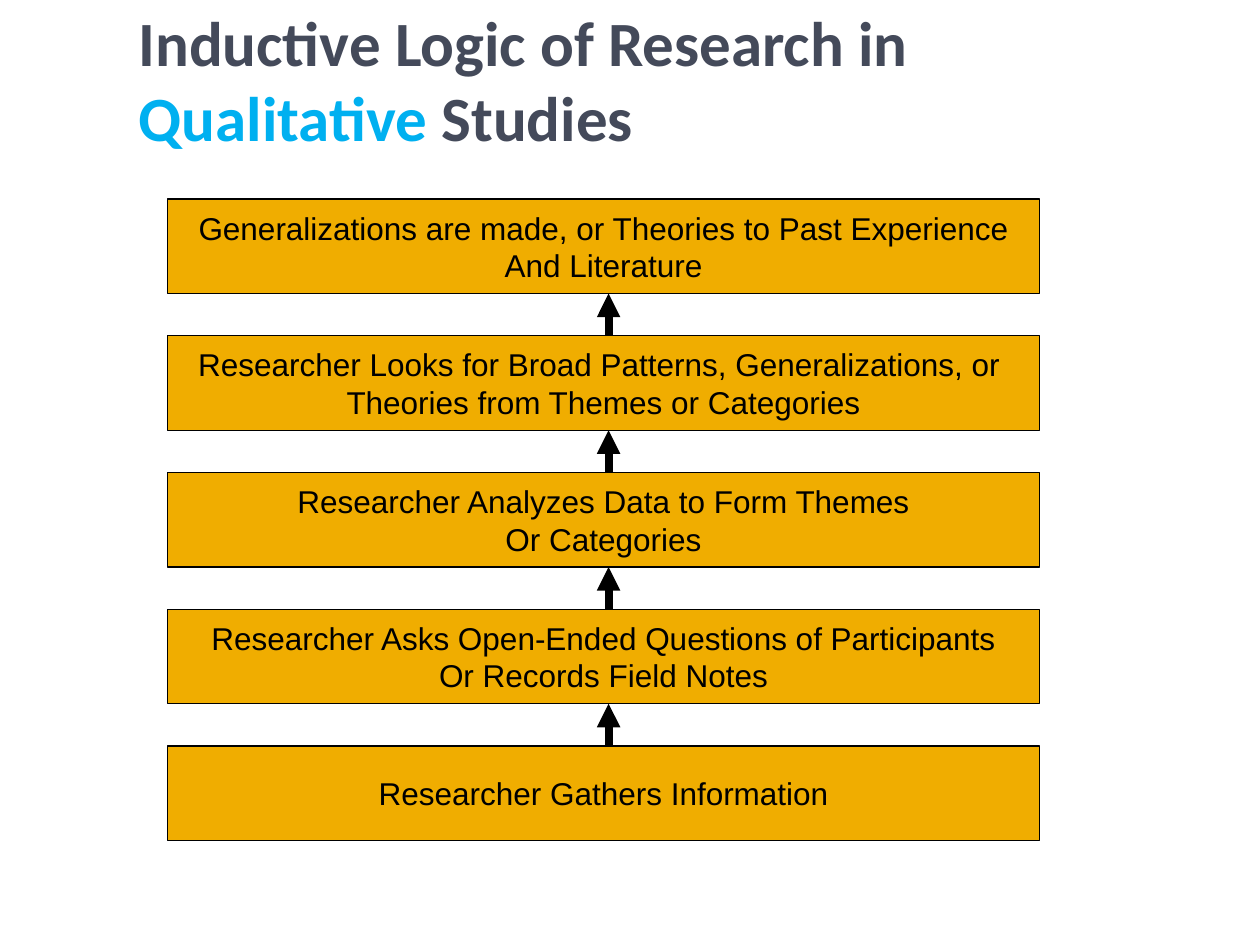
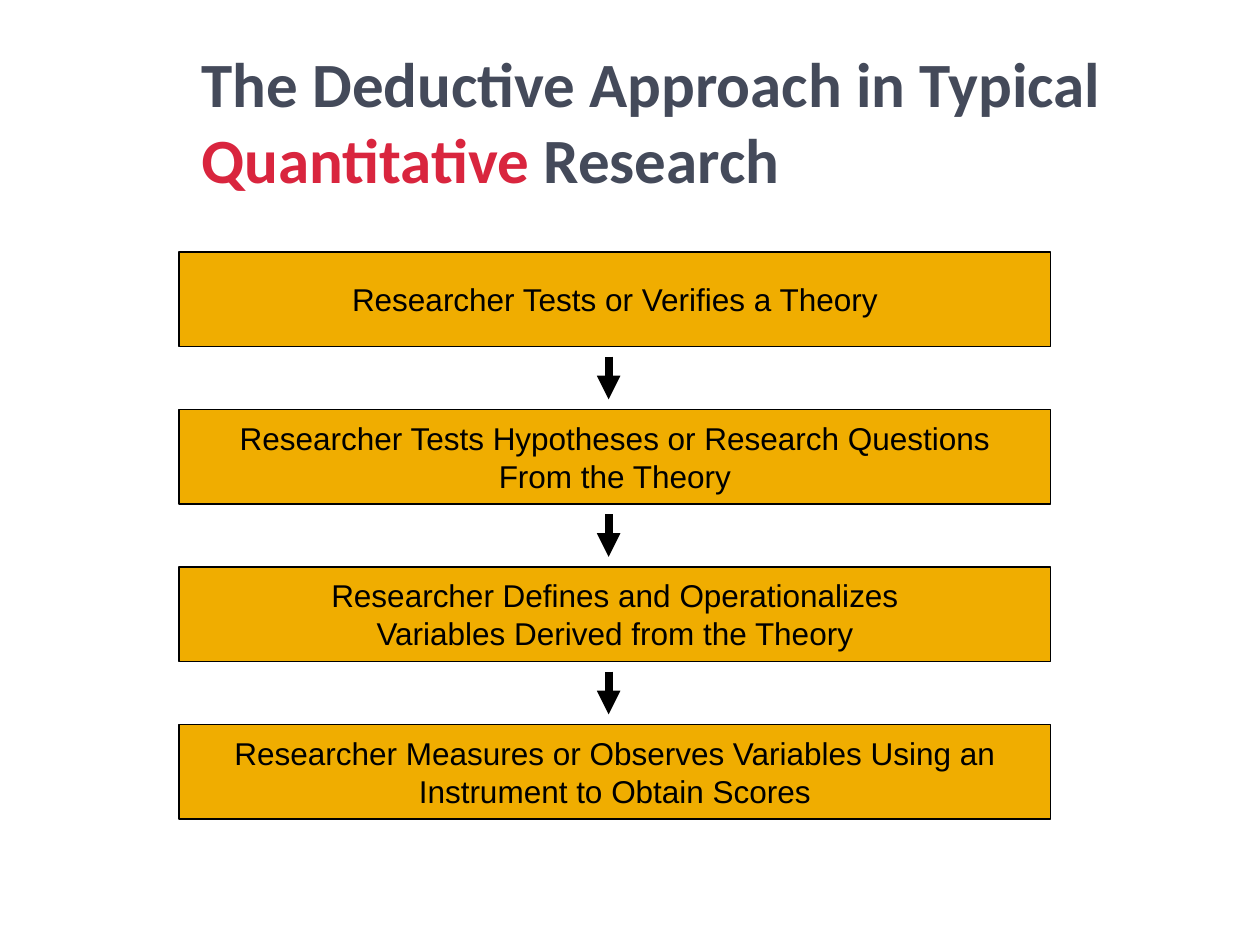
from pptx import Presentation
from pptx.dml.color import RGBColor
from pptx.enum import shapes, text
from pptx.oxml.ns import qn
from pptx.util import Inches, Pt
from lxml import etree

SLATE, AMBER, BLACK = "444A5A", "F0AD00", "000000"
BOX_WIDTH, BOX_HEIGHT, ARROW_X = 6.92, 0.75, 4.83

FLOWS = [
    {
        "title": [("Inductive Logic of Research in ", SLATE),
                  ("Qualitative", "00B0F0"), (" Studies", SLATE)],
        "title_area": (1, 0, 8.33, 1.25),
        "left": 1.33, "first_top": 1.58, "last_top": 5.92,
        "arrow_gap": 0, "upward": True,
        "steps": [
            ["Generalizations are made, or Theories to Past Experience",
             "And Literature"],
            ["Researcher Looks for Broad Patterns, Generalizations, or ",
             "Theories from Themes or Categories"],
            ["Researcher Analyzes Data to Form Themes", "Or Categories"],
            ["Researcher Asks Open-Ended Questions of Participants",
             "Or Records Field Notes"],
            ["Researcher Gathers Information"],
        ],
    },
    {
        "title": [("The Deductive Approach in Typical ", SLATE),
                  ("Quantitative", "D9253E"), (" Research", SLATE)],
        "title_area": (1.5, 0.33, 8.5, 1.25),
        "left": 1.42, "first_top": 2, "last_top": 5.75,
        "arrow_gap": 0.08, "upward": False,
        "steps": [
            ["Researcher Tests or Verifies a Theory"],
            ["Researcher Tests Hypotheses or Research Questions",
             "From the Theory"],
            ["Researcher Defines and Operationalizes",
             "Variables Derived from the Theory"],
            ["Researcher Measures or Observes Variables Using an",
             "Instrument to Obtain Scores"],
        ],
    },
]


def color(value):
    return RGBColor.from_string(value)


def add_span(para, words, font, size, ink, bold=False):
    span = para.add_run()
    span.text = words
    span.font.name, span.font.size, span.font.bold = font, Pt(size), bold
    span.font.color.rgb = color(ink)


def set_title(page, spans, area):
    title = page.shapes.title
    title.left, title.top, title.width, title.height = map(Inches, area)
    frame = title.text_frame
    frame.auto_size = text.MSO_AUTO_SIZE.NONE
    frame.word_wrap = True
    frame.vertical_anchor = text.MSO_ANCHOR.MIDDLE
    frame.margin_left = Inches(0.1)
    frame.margin_top = frame.margin_right = frame.margin_bottom = Inches(0.05)
    para = frame.paragraphs[0]
    para.alignment = text.PP_ALIGN.LEFT
    for words, ink in spans:
        add_span(para, words, "Calibri", 36, ink, bold=True)


def add_step(page, lines, left, top):
    box = page.shapes.add_shape(
        shapes.MSO_SHAPE.RECTANGLE,
        *map(Inches, (left, top, BOX_WIDTH, BOX_HEIGHT)))
    box.shadow.inherit = False
    box.fill.solid()
    box.fill.fore_color.rgb = color(AMBER)
    box.line.color.rgb = color(BLACK)
    box.line.width = Pt(0.75)
    frame = box.text_frame
    frame.word_wrap = False
    frame.vertical_anchor = text.MSO_ANCHOR.MIDDLE
    for index, words in enumerate(lines):
        para = frame.add_paragraph() if index else frame.paragraphs[0]
        para.alignment = text.PP_ALIGN.CENTER
        add_span(para, words, "Arial", 18, BLACK)


def add_arrow(page, start, end):
    arrow = page.shapes.add_connector(
        shapes.MSO_CONNECTOR.STRAIGHT,
        *map(Inches, (ARROW_X, start, ARROW_X, end)))
    arrow.line.color.rgb = color(BLACK)
    arrow.line.width = Pt(4.5)
    properties = arrow.element.spPr
    outline = properties.find(qn("a:ln"))
    etree.SubElement(outline, qn("a:tailEnd"), type="triangle")
    etree.SubElement(properties, qn("a:effectLst"))


def add_flow(deck, flow):
    page = deck.slides.add_slide(deck.slide_layouts[5])
    set_title(page, flow["title"], flow["title_area"])
    steps = flow["steps"]
    pitch = (flow["last_top"] - flow["first_top"]) / (len(steps) - 1)
    for index, lines in enumerate(steps):
        top = flow["first_top"] + index * pitch
        add_step(page, lines, flow["left"], top)
        if index:
            upper = top - pitch + BOX_HEIGHT + flow["arrow_gap"]
            lower = top - flow["arrow_gap"]
            ends = (lower, upper) if flow["upward"] else (upper, lower)
            add_arrow(page, *ends)


def main():
    deck = Presentation()
    deck.slide_width, deck.slide_height = Inches(10), Inches(7.5)
    for flow in FLOWS:
        add_flow(deck, flow)
    deck.save("out.pptx")


if __name__ == "__main__":
    main()
